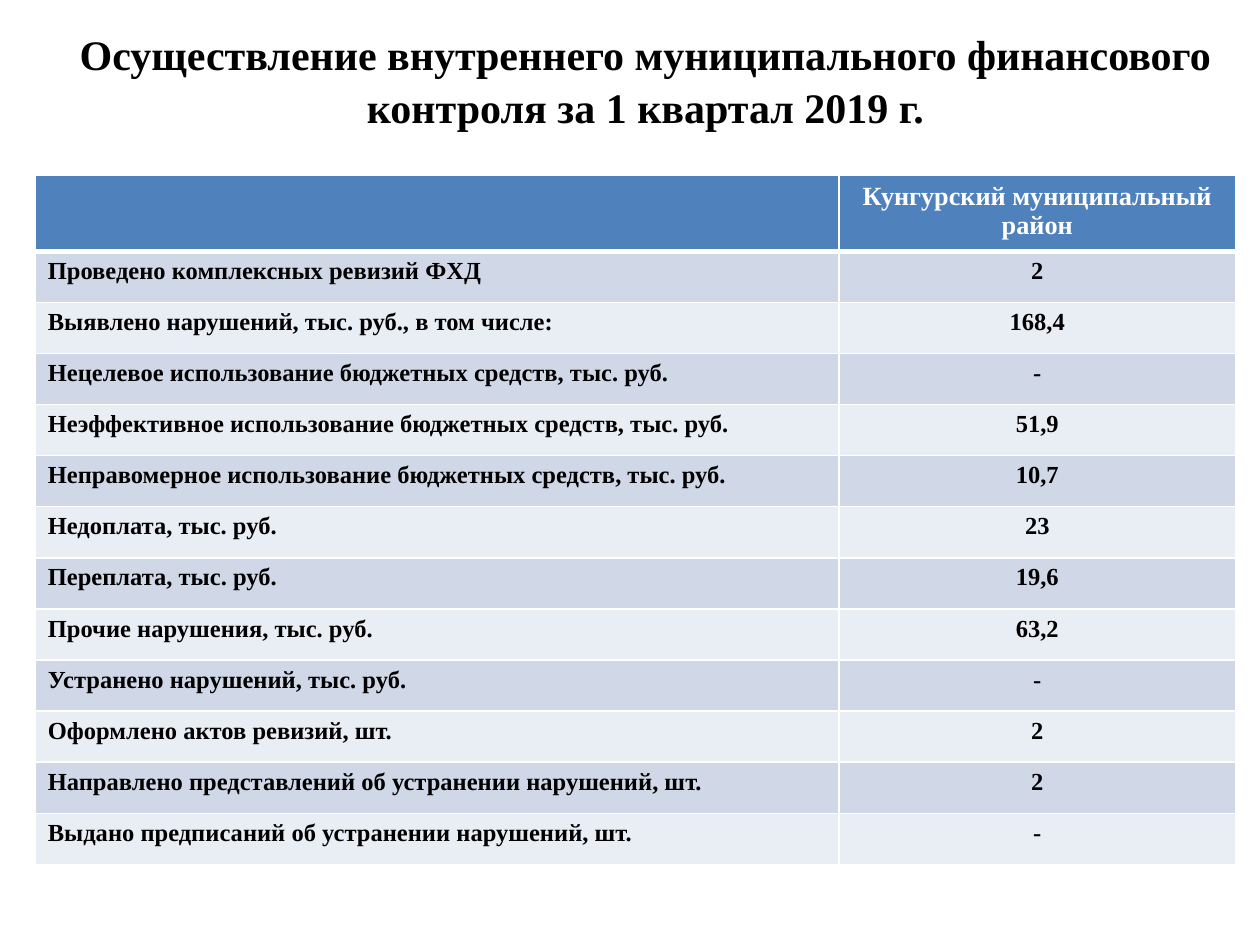
from lxml.etree import SubElement
from pptx import Presentation
from pptx.dml.color import RGBColor
from pptx.enum.text import MSO_ANCHOR, PP_ALIGN
from pptx.oxml.ns import qn
from pptx.util import Cm, Pt

FONT = "Times New Roman"
TITLE = "Осуществление внутреннего муниципального финансового контроля за 1 квартал 2019 г."
HEADER = ("", "Кунгурский муниципальный район")
RESULTS = [
    ("Проведено комплексных ревизий ФХД", "2"),
    ("Выявлено нарушений, тыс. руб., в том числе:", "168,4"),
    ("Нецелевое использование бюджетных средств, тыс. руб.", "-"),
    ("Неэффективное использование бюджетных средств, тыс. руб.", "51,9"),
    ("Неправомерное использование бюджетных средств, тыс. руб.", "10,7"),
    ("Недоплата, тыс. руб.", "23"),
    ("Переплата, тыс. руб.", "19,6"),
    ("Прочие нарушения, тыс. руб.", "63,2"),
    ("Устранено нарушений, тыс. руб.", "-"),
    ("Оформлено актов ревизий, шт.", "2"),
    ("Направлено представлений об устранении нарушений, шт.", "2"),
    ("Выдано предписаний об устранении нарушений, шт.", "-"),
]
COLUMN_WIDTHS = (Cm(16.2), Cm(8))
HEADER_HEIGHT, ROW_HEIGHT = Cm(1.52), Cm(1.03)
HEADER_FILL, BAND_FILLS = "4F81BD", ("D0D8E8", "E9EDF4")


def color(value):
    """Turn a hex string into a colour."""
    return RGBColor.from_string(value)


def write_text(frame, text, size, ink, align):
    """Write one bold paragraph into a text frame."""
    para = frame.paragraphs[0]
    para.text = text
    para.alignment = align
    para.font.name = FONT
    para.font.size = Pt(size)
    para.font.bold = True
    para.font.color.rgb = color(ink)
    return para


def add_title(page):
    """Add the centred slide title."""
    box = page.shapes.add_textbox(Cm(1.3), Cm(0), Cm(23.42), Cm(3.18))
    frame = box.text_frame
    frame.word_wrap = True
    frame.vertical_anchor = MSO_ANCHOR.MIDDLE
    para = write_text(frame, TITLE, 24, "000000", PP_ALIGN.CENTER)
    para.line_spacing = 1.05


def set_borders(cell, widths):
    """Draw white borders of the given widths in points."""
    properties = cell._tc.get_or_add_tcPr()
    for side, width in widths.items():
        line = SubElement(properties, qn(f"a:ln{side}"), w=str(Pt(width)))
        fill = SubElement(line, qn("a:solidFill"))
        SubElement(fill, qn("a:srgbClr"), val="FFFFFF")


def fill_row(table, index, texts, size, ink, fill, aligns):
    """Fill and style one table row."""
    top = 3 if index == 1 else 1
    bottom = 3 if index == 0 else 1
    for cell, text, align in zip(table.rows[index].cells, texts, aligns):
        set_borders(cell, {"L": 1, "R": 1, "T": top, "B": bottom})
        cell.fill.solid()
        cell.fill.fore_color.rgb = color(fill)
        write_text(cell.text_frame, text, size, ink, align)


def add_results_table(page):
    """Add the table of audit results."""
    height = HEADER_HEIGHT + ROW_HEIGHT * len(RESULTS)
    table = page.shapes.add_table(
        len(RESULTS) + 1, 2, Cm(0.71), Cm(3.54), sum(COLUMN_WIDTHS), height
    ).table
    for column, width in zip(table.columns, COLUMN_WIDTHS):
        column.width = width
    for row in table.rows:
        row.height = ROW_HEIGHT
    table.rows[0].height = HEADER_HEIGHT
    fill_row(table, 0, HEADER, 15, "FFFFFF", HEADER_FILL, [PP_ALIGN.CENTER] * 2)
    aligns = (PP_ALIGN.LEFT, PP_ALIGN.CENTER)
    for index, result in enumerate(RESULTS, start=1):
        band = BAND_FILLS[(index - 1) % 2]
        fill_row(table, index, result, 14, "000000", band, aligns)


def main():
    """Build and save the slide."""
    deck = Presentation()
    deck.slide_width, deck.slide_height = Cm(25.4), Cm(19.05)
    page = deck.slides.add_slide(deck.slide_layouts[6])
    add_title(page)
    add_results_table(page)
    deck.save("out.pptx")


if __name__ == "__main__":
    main()
